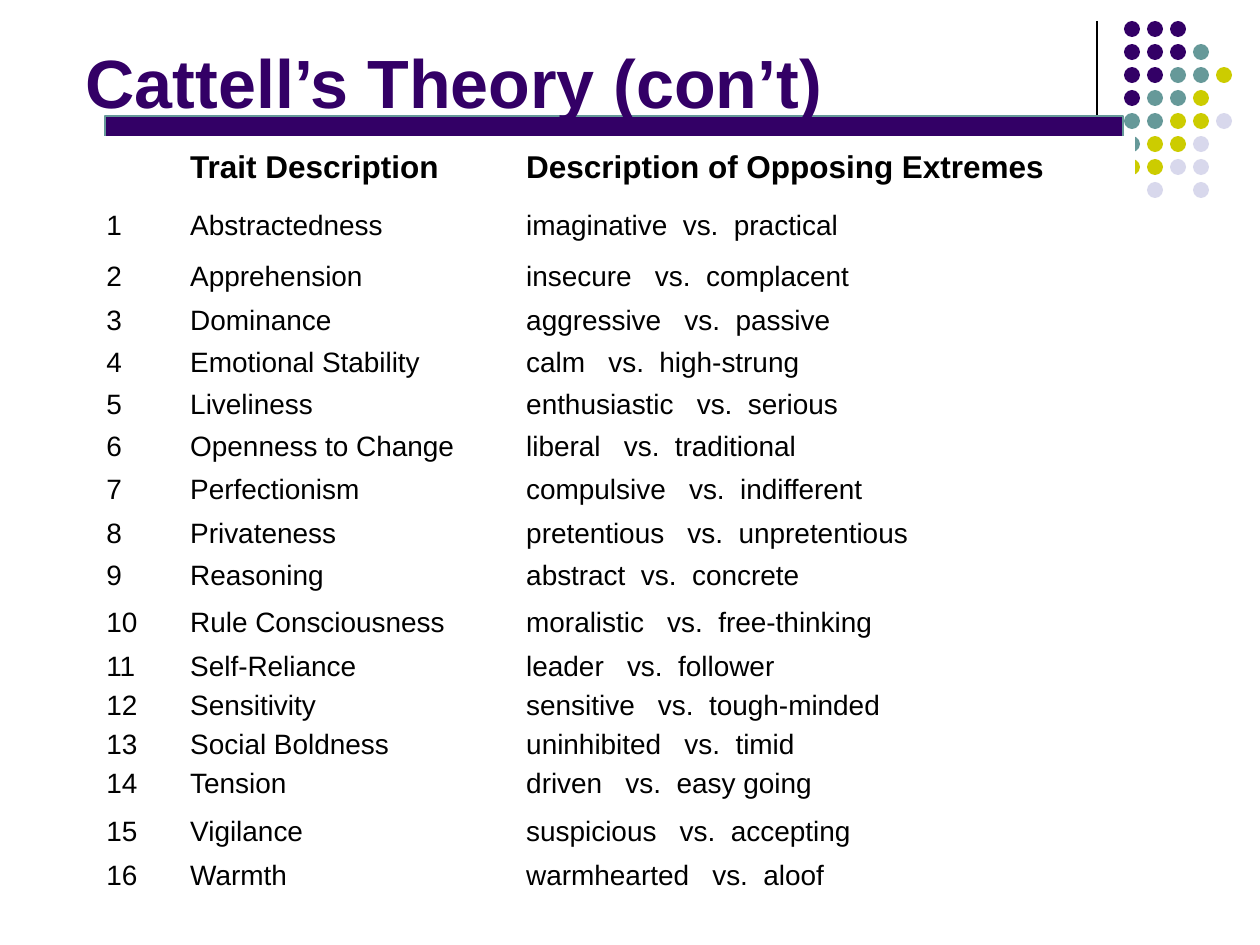
"""Build the slide listing Cattell's sixteen personality traits."""
from typing import Any, NamedTuple

from lxml import etree
from pptx import Presentation
from pptx import util as u
from pptx.dml.color import RGBColor
from pptx.enum import shapes, text
from pptx.oxml.ns import qn

EMU_PER_PX = 914400 / 126
PURPLE, TEAL, OLIVE, LILAC = "330066", "669999", "CCCC00", "D8D8EC"
BLACK, WHITE = "000000", "FFFFFF"

DOT_COLOURS = {"P": PURPLE, "T": TEAL, "O": OLIVE, "L": LILAC}
DOT_ROWS = ("PPP", "PPPT", "PPTTO", "PTTO", "TTOOL", "TOOL", "OOLL", " L L")
DOT_SIZE, DOT_PITCH = 16, 23

COLUMN_WIDTHS = (84, 336, 609)
HEADER_HEIGHT = 62
CELL_FORMAT = {
    "margin_left": u.Inches(0.01),
    "margin_right": u.Inches(0.01),
    "margin_top": u.Inches(0.01),
    "margin_bottom": u.Inches(0.01),
    "vertical_anchor": text.MSO_ANCHOR.MIDDLE,
}
HEADING_FORMAT = {
    "auto_size": text.MSO_AUTO_SIZE.NONE,
    "vertical_anchor": text.MSO_ANCHOR.BOTTOM,
    "margin_bottom": 0,
    "word_wrap": True,
}
HEADING_FONT = {"name": "Arial", "size": u.Pt(39), "bold": True}
HEADER_FONT = {"name": "Arial", "size": u.Pt(18), "bold": True}
TRAIT_FONT = {"name": "Arial", "size": u.Pt(16), "bold": False}


class Box(NamedTuple):
    """A rectangle in px."""

    left: int
    top: int
    width: int
    height: int


class Trait(NamedTuple):
    """A trait, its opposing extremes and its row height in px."""

    name: str
    extremes: str
    height: int


TRAITS = (
    Trait("Abstractedness", "imaginative  vs.  practical", 54),
    Trait("Apprehension", "insecure   vs.  complacent", 47),
    Trait("Dominance", "aggressive   vs.  passive", 42),
    Trait("Emotional Stability", "calm   vs.  high-strung", 42),
    Trait("Liveliness", "enthusiastic   vs.  serious", 42),
    Trait("Openness to Change", "liberal   vs.  traditional", 42),
    Trait("Perfectionism", "compulsive   vs.  indifferent", 45),
    Trait("Privateness", "pretentious   vs.  unpretentious", 42),
    Trait("Reasoning", "abstract  vs.  concrete", 42),
    Trait("Rule Consciousness", "moralistic   vs.  free-thinking", 53),
    Trait("Self-Reliance", "leader   vs.  follower", 34),
    Trait("Sensitivity", "sensitive   vs.  tough-minded", 44),
    Trait("Social Boldness", "uninhibited   vs.  timid", 34),
    Trait("Tension", "driven   vs.  easy going", 44),
    Trait("Vigilance", "suspicious   vs.  accepting", 53),
    Trait("Warmth", "warmhearted   vs.  aloof", 34),
)


def px(length: int) -> u.Emu:
    """Turn px into EMU."""
    return u.Emu(round(length * EMU_PER_PX))


def rgb(colour: str) -> RGBColor:
    """Turn a hex string into a colour."""
    return RGBColor.from_string(colour)


def apply(target: Any, values: dict[str, Any]) -> None:
    """Set each named attribute on the target."""
    for name, value in values.items():
        setattr(target, name, value)


def fill_solid(target: Any, colour: str) -> None:
    """Give a shape or cell one plain fill."""
    target.fill.solid()
    target.fill.fore_color.rgb = rgb(colour)


def write(frame: Any, words: str, font: dict[str, Any], colour: str) -> None:
    """Write one left-aligned formatted paragraph."""
    paragraph = frame.paragraphs[0]
    paragraph.alignment = text.PP_ALIGN.LEFT
    run = paragraph.add_run()
    run.text = words
    apply(run.font, font)
    run.font.color.rgb = rgb(colour)


def draw_shape(slide: Any, kind: Any, box: Box, fill: str, line: str = "") -> None:
    """Draw a plain shape, outlined only when a line colour is given."""
    shape = slide.shapes.add_shape(kind, *map(px, box))
    shape.shadow.inherit = False
    fill_solid(shape, fill)
    if line:
        shape.line.color.rgb = rgb(line)
        shape.line.width = u.Pt(0.75)
    else:
        shape.line.fill.background()


def draw_divider(slide: Any, x: int, top: int, bottom: int) -> None:
    """Draw the thin vertical line beside the dots."""
    divider = slide.shapes.add_connector(
        shapes.MSO_CONNECTOR.STRAIGHT, px(x), px(top), px(x), px(bottom)
    )
    divider.line.color.rgb = rgb(BLACK)
    divider.line.width = u.Pt(0.75)
    etree.SubElement(divider.element.spPr, qn("a:effectLst"))


def draw_dots(slide: Any, left: int, top: int) -> None:
    """Draw the grid of coloured dots."""
    for row, letters in enumerate(DOT_ROWS):
        for column, letter in enumerate(letters):
            if letter in DOT_COLOURS:
                dot = Box(left + column * DOT_PITCH, top + row * DOT_PITCH,
                          DOT_SIZE, DOT_SIZE)
                draw_shape(slide, shapes.MSO_SHAPE.OVAL, dot, DOT_COLOURS[letter])


def draw_traits(slide: Any, left: int, top: int) -> None:
    """Draw the numbered table of traits."""
    heights = [HEADER_HEIGHT, *(trait.height for trait in TRAITS)]
    box = Box(left, top, sum(COLUMN_WIDTHS), sum(heights))
    table = slide.shapes.add_table(
        len(heights), len(COLUMN_WIDTHS), *map(px, box)
    ).table
    apply(table, {"first_row": False, "horz_banding": False})
    for column, width in zip(table.columns, COLUMN_WIDTHS):
        column.width = px(width)
    records = [("", "Trait Description", "Description of Opposing Extremes")]
    records += [(str(number), trait.name, trait.extremes)
                for number, trait in enumerate(TRAITS, 1)]
    for index, (row, height, record) in enumerate(zip(table.rows, heights, records)):
        row.height = px(height)
        for cell, words in zip(row.cells, record):
            apply(cell, CELL_FORMAT)
            fill_solid(cell, WHITE)
            if words:
                write(cell.text_frame, words, TRAIT_FONT if index else HEADER_FONT, BLACK)


def place_heading(slide: Any, box: Box, words: str) -> None:
    """Fill the title placeholder and bring it to the front."""
    heading = slide.shapes.title
    apply(heading, dict(zip(box._fields, map(px, box))))
    apply(heading.text_frame, HEADING_FORMAT)
    write(heading.text_frame, words, HEADING_FONT, PURPLE)
    slide.shapes.element.append(heading.element)


def main() -> None:
    """Build and save the slide."""
    deck = Presentation()
    apply(deck, {"slide_width": px(1260), "slide_height": px(945)})
    slide = deck.slides.add_slide(deck.slide_layouts.get_by_name("Title Only"))
    draw_divider(slide, 1097, 21, 231)
    draw_dots(slide, 1124, 21)
    draw_shape(slide, shapes.MSO_SHAPE.RECTANGLE, Box(105, 116, 1018, 21), PURPLE, TEAL)
    draw_traits(slide, 105, 137)
    place_heading(slide, Box(73, 32, 1071, 90), "Cattell’s Theory (con’t)")
    deck.save("out.pptx")


if __name__ == "__main__":
    main()
